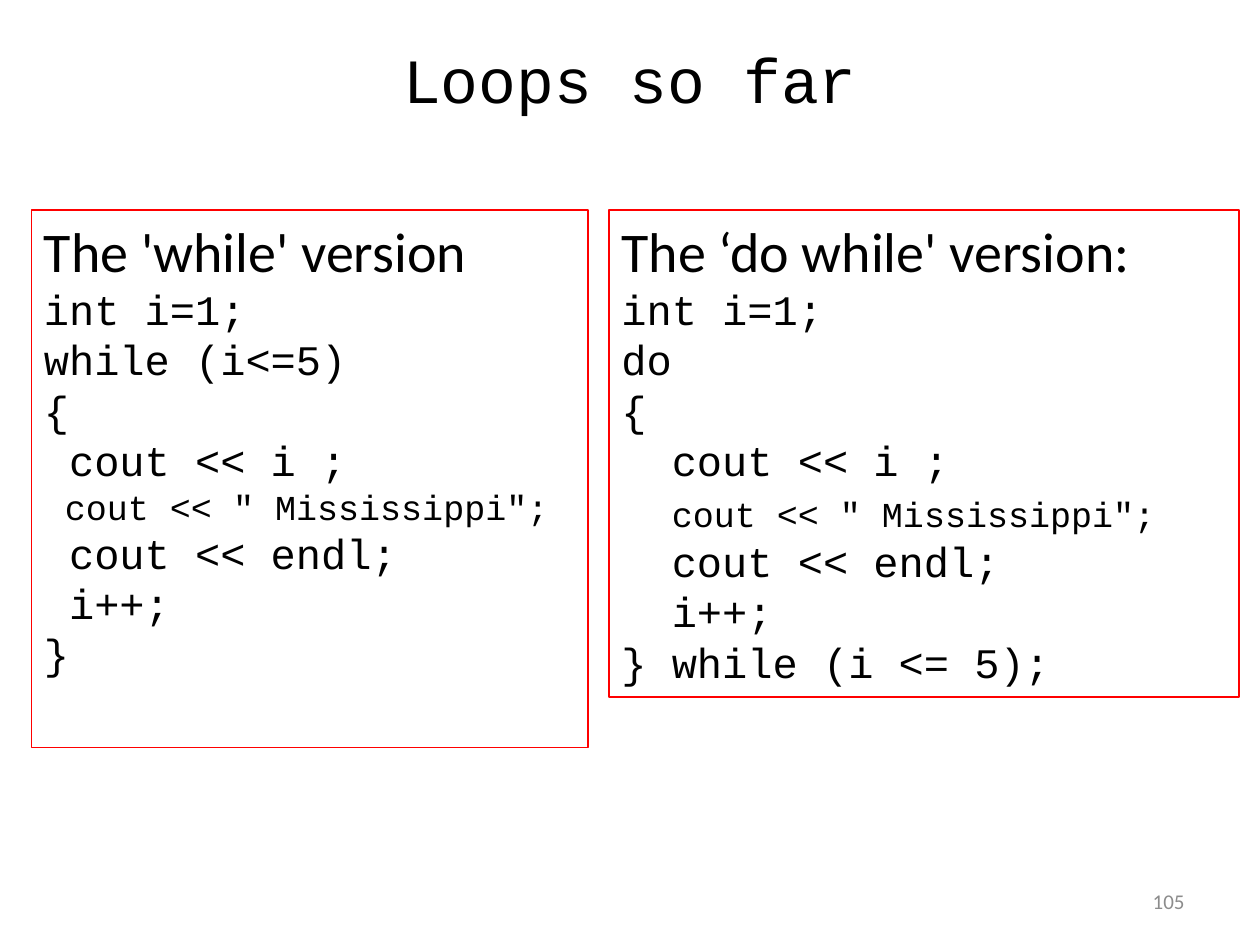
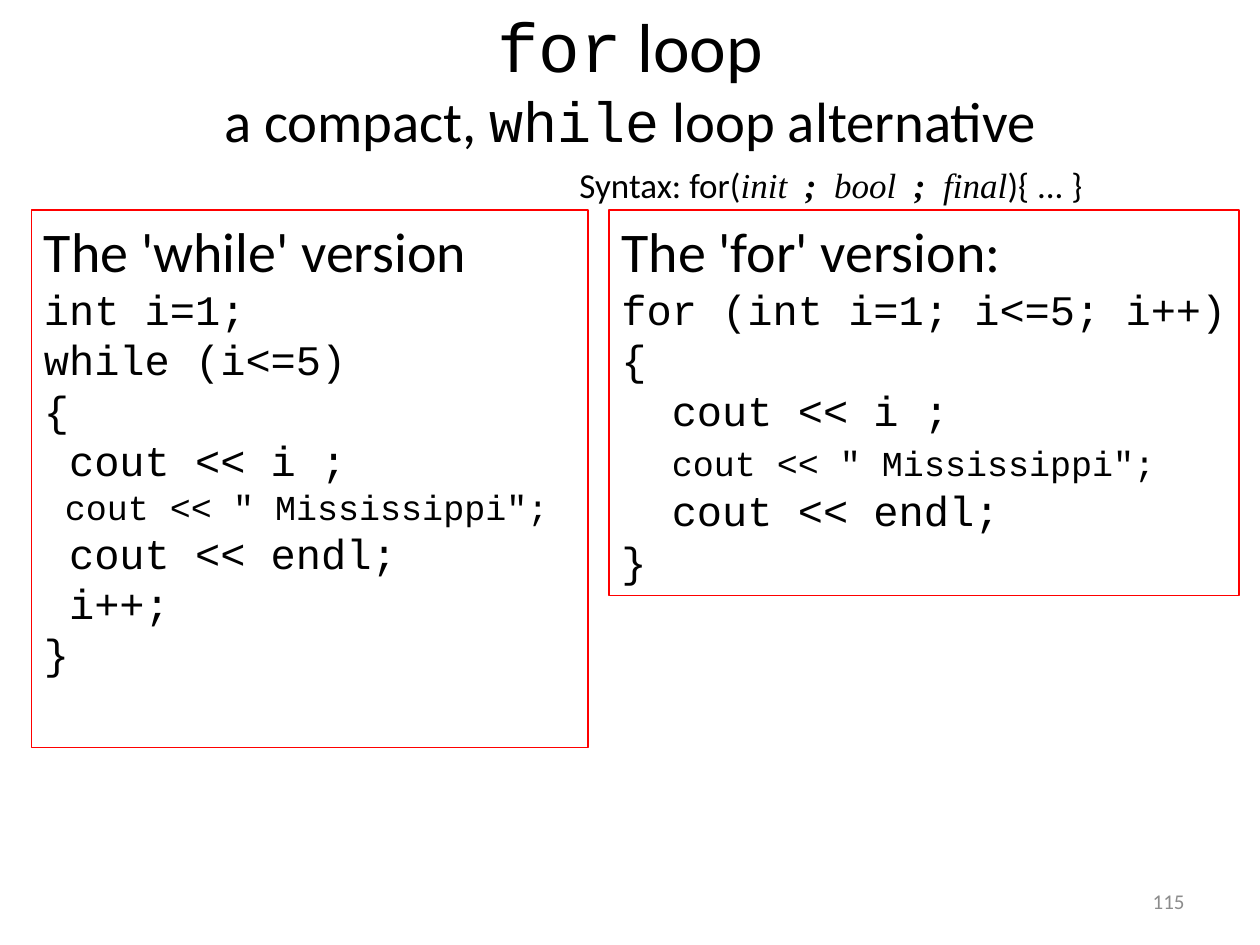
from dataclasses import dataclass

import pptx
import pptx.dml.color
import pptx.enum.shapes
import pptx.enum.text
import pptx.util

PX = 7620  # EMU in one px, 120 px to the inch
COLORS = {"text": "000000", "number": "8C8C8C", "border": "FF0000"}
SANS, MONO, SERIF = "Calibri", "Courier New", "Times New Roman"
ALIGN = pptx.enum.text.PP_ALIGN
ANCHOR = pptx.enum.text.MSO_ANCHOR
TITLE_ONLY_LAYOUT = 5


@dataclass(frozen=True)
class Box:
    left: int
    top: int
    width: int
    height: int

    def emu(self) -> list[int]:
        return [side * PX for side in (self.left, self.top, self.width, self.height)]


@dataclass(frozen=True)
class Run:
    text: str
    size: float = 24
    font: str = MONO
    bold: bool = False
    italic: bool = False
    color: str = "text"


@dataclass(frozen=True)
class CodePanel:
    box: Box
    heading: str
    lines: list[list[Run]]


@dataclass(frozen=True)
class LoopSlide:
    title: list[list[Run]]  # one list of runs for each title line
    number: str
    panels: list[CodePanel]
    syntax: list[Run]


# Shared places
TITLE_BOX = Box(60, 0, 1080, 150)
NUMBER_BOX = Box(860, 834, 280, 48)
SYNTAX_BOX = Box(540, 150, 660, 53)
PANEL_TOP = 200


def add_run(paragraph, text: str, *, size: float, font: str, bold: bool = False,
            italic: bool = False, color: str = "text") -> None:
    run = paragraph.add_run()
    run.text = text
    run.font.size = pptx.util.Pt(size)
    run.font.name = font
    run.font.bold = bold
    run.font.italic = italic
    run.font.color.rgb = pptx.dml.color.RGBColor.from_string(COLORS[color])


def add_runs(paragraph, runs: list[Run]) -> None:
    for run in runs:
        add_run(paragraph, run.text, size=run.size, font=run.font, bold=run.bold,
                italic=run.italic, color=run.color)


def fill_title(slide, lines: list[list[Run]]) -> None:
    title = slide.shapes.title
    title.left, title.top, title.width, title.height = TITLE_BOX.emu()
    title.text_frame.vertical_anchor = ANCHOR.MIDDLE
    paragraph = title.text_frame.paragraphs[0]
    paragraph.alignment = ALIGN.CENTER
    for index, runs in enumerate(lines):
        if index:
            paragraph.add_line_break()
        add_runs(paragraph, runs)


def add_text(slide, box: Box, runs: list[Run], align=ALIGN.LEFT, anchor=ANCHOR.TOP) -> None:
    frame = slide.shapes.add_textbox(*box.emu()).text_frame
    frame.word_wrap = True
    frame.vertical_anchor = anchor
    frame.paragraphs[0].alignment = align
    add_runs(frame.paragraphs[0], runs)


def add_panel(slide, panel: CodePanel) -> None:
    shape = slide.shapes.add_shape(
        pptx.enum.shapes.MSO_SHAPE.RECTANGLE, *panel.box.emu())
    shape.shadow.inherit = False
    shape.fill.background()
    shape.line.color.rgb = pptx.dml.color.RGBColor.from_string(COLORS["border"])
    shape.line.width = pptx.util.Pt(0.75)
    frame = shape.text_frame
    frame.word_wrap = True
    frame.vertical_anchor = ANCHOR.TOP
    frame.margin_right = 0  # room for the longest code line
    for index, runs in enumerate([[Run(panel.heading, 32, SANS)], *panel.lines]):
        paragraph = frame.add_paragraph() if index else frame.paragraphs[0]
        paragraph.alignment = ALIGN.LEFT
        add_runs(paragraph, runs)


def code(*lines: str) -> list[list[Run]]:
    return [[Run(line)] for line in lines]


# Code shared by the panels
PRINT_WORD = 'cout << " Mississippi";'
INDENTED_PRINTS = [
    *code("{", "  cout << i ;"),
    [Run("  "), Run(PRINT_WORD, 20)],
    *code("  cout << endl;"),
]
WHILE_PANEL = CodePanel(Box(30, PANEL_TOP, 530, 512), "The 'while' version", [
    *code("int i=1;", "while (i<=5)", "{", " cout << i ;"),
    [Run(" " + PRINT_WORD, 20)],
    *code(" cout << endl;", " i++;", "}"),
])
DO_WHILE_PANEL = CodePanel(Box(580, PANEL_TOP, 600, 464), "The ‘do while' version:", [
    *code("int i=1;", "do"),
    *INDENTED_PRINTS,
    *code("  i++;", "} while (i <= 5);"),
])
FOR_PANEL = CodePanel(Box(580, PANEL_TOP, 600, 367), "The 'for' version:", [
    *code("for (int i=1; i<=5; i++)"),
    *INDENTED_PRINTS,
    *code("}"),
])

# Syntax line: italic parts with bold semicolons between them
SEMICOLON = Run(";  ", 20, SERIF, bold=True, italic=True)
FOR_SYNTAX = [
    Run("Syntax: for(", 20, SANS),
    Run("init  ", 20, SERIF, italic=True), SEMICOLON,
    Run("bool  ", 20, SERIF, italic=True), SEMICOLON,
    Run("final", 20, SERIF, italic=True),
    Run("){ ... }", 20, SANS),
]

SLIDES = [
    LoopSlide([[Run("Loops so far", 36)]], "105", [WHILE_PANEL, DO_WHILE_PANEL], []),
    LoopSlide(
        [[Run("for", 39.6), Run(" loop", 39.6, SANS)],
         [Run("a compact, ", 32.4, SANS), Run("while", 32.4),
          Run(" loop alternative", 32.4, SANS)]],
        "115", [WHILE_PANEL, FOR_PANEL], FOR_SYNTAX),
]


def main() -> None:
    presentation = pptx.Presentation()
    presentation.slide_width = 1200 * PX
    presentation.slide_height = 900 * PX
    for content in SLIDES:
        slide = presentation.slides.add_slide(
            presentation.slide_layouts[TITLE_ONLY_LAYOUT])
        fill_title(slide, content.title)
        add_text(slide, NUMBER_BOX, [Run(content.number, 12, SANS, color="number")],
                 ALIGN.RIGHT, ANCHOR.MIDDLE)
        for panel in content.panels:
            add_panel(slide, panel)
        if content.syntax:
            add_text(slide, SYNTAX_BOX, content.syntax)
    presentation.save("out.pptx")


if __name__ == "__main__":
    main()
